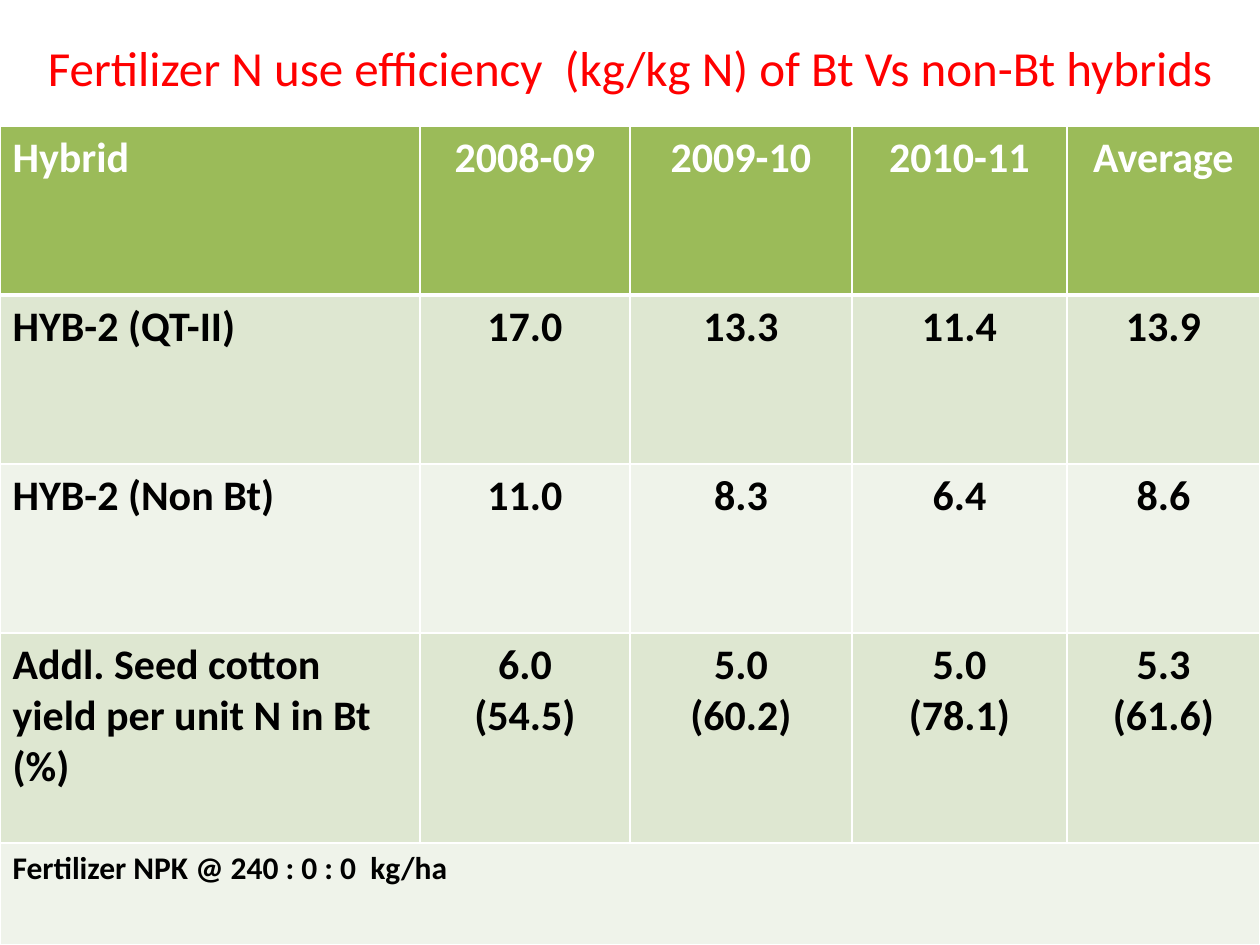
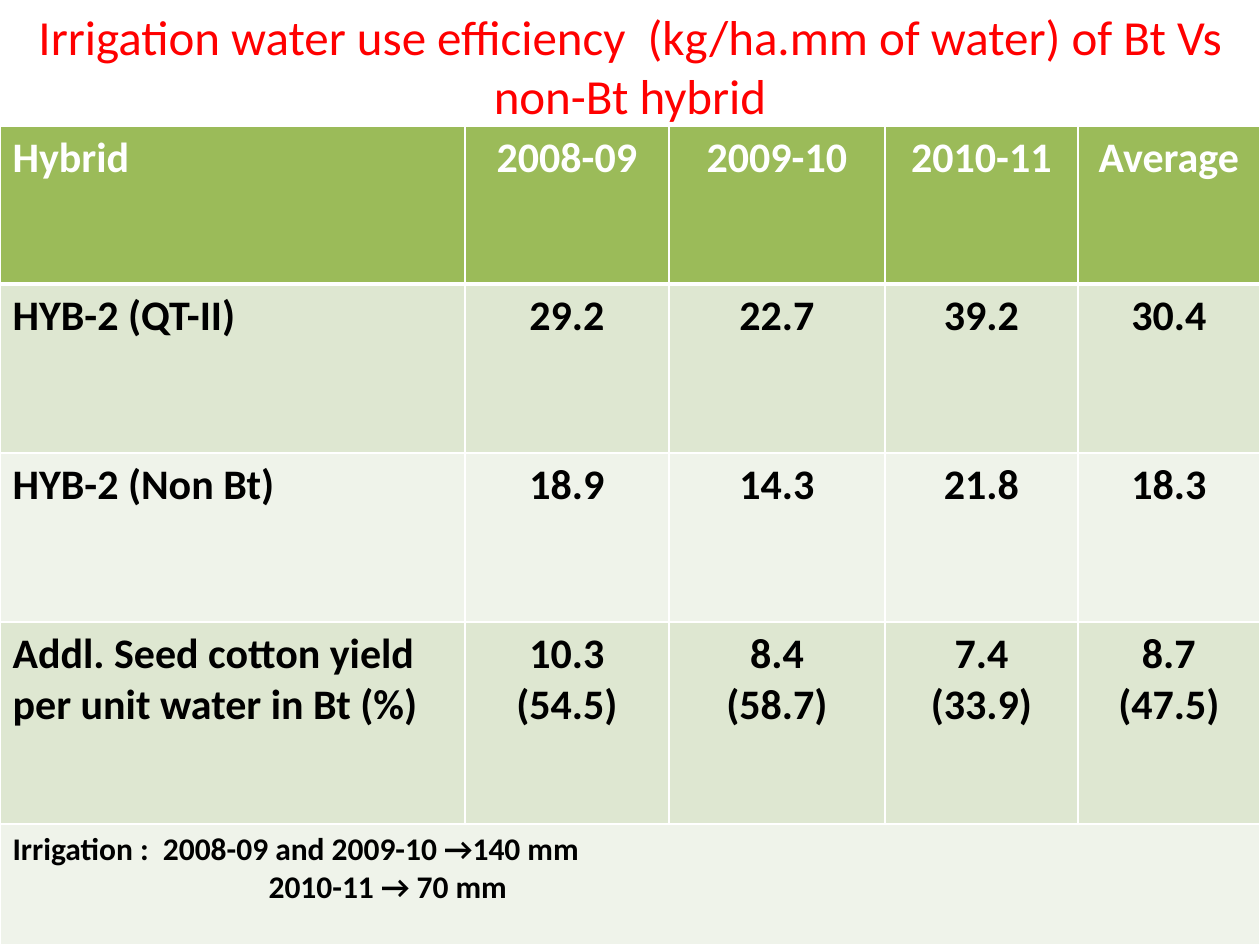
from lxml import etree
from pptx import Presentation
from pptx.dml.color import RGBColor
from pptx.enum.text import MSO_ANCHOR, MSO_AUTO_SIZE, PP_ALIGN
from pptx.oxml.ns import qn
from pptx.util import Emu, Pt

TOP = MSO_ANCHOR.TOP
NO_AUTOFIT = MSO_AUTO_SIZE.NONE
LEFT, CENTER = PP_ALIGN.LEFT, PP_ALIGN.CENTER
TITLE_ONLY = 5
PX_PER_INCH = 126
SLIDE_WIDTH, SLIDE_HEIGHT = 1260, 945
TABLE_TOP = 126
YEARS = ["Hybrid", "2008-09", "2009-10", "2010-11", "Average"]
BT_HYBRID, NON_BT_HYBRID = "HYB-2 (QT-II)", "HYB-2 (Non Bt)"


def px(length):
    return Emu(round(length * 914400 / PX_PER_INCH))


def color(hex_string):
    return RGBColor.from_string(hex_string)


class Deck:
    font_name = "Calibri"
    title_color = "FF0000"
    header_fill = "9BBB59"
    band_fills = ["EFF3EA", "DEE7D1"]
    white, black = "FFFFFF", "000000"
    title_size, body_size, note_size = 28, 24, 18

    def __init__(self):
        self.presentation = Presentation()
        self.presentation.slide_width = px(SLIDE_WIDTH)
        self.presentation.slide_height = px(SLIDE_HEIGHT)
        self.slide = None

    def add_slide(self):
        layout = self.presentation.slide_layouts[TITLE_ONLY]
        self.slide = self.presentation.slides.add_slide(layout)

    def format_paragraph(self, paragraph, size, text_color, bold, alignment):
        paragraph.alignment = alignment
        font = paragraph.font
        font.name, font.size, font.bold = self.font_name, Pt(size), bold
        font.color.rgb = color(text_color)

    def title(self, text, top, height):
        shape = self.slide.shapes.title
        shape.left, shape.top = px(0), px(top)
        shape.width, shape.height = px(SLIDE_WIDTH), px(height)
        frame = shape.text_frame
        frame.text = text
        frame.word_wrap = True
        frame.auto_size = NO_AUTOFIT
        frame.vertical_anchor = TOP
        self.format_paragraph(frame.paragraphs[0], self.title_size,
                              self.title_color, False, CENTER)

    def borders(self, cell, top, bottom):
        properties = cell._tc.get_or_add_tcPr()
        sides = {"a:lnL": 1, "a:lnR": 1, "a:lnT": top, "a:lnB": bottom}
        for index, (tag, width) in enumerate(sides.items()):
            line = etree.Element(qn(tag), w=str(Pt(width)))
            fill = etree.SubElement(line, qn("a:solidFill"))
            etree.SubElement(fill, qn("a:srgbClr"), val=self.white)
            properties.insert(index, line)

    def cell(self, cell, text, row, size, alignment):
        is_header = row == 0
        cell.fill.solid()
        cell.fill.fore_color.rgb = color(
            self.header_fill if is_header else self.band_fills[row % 2])
        self.borders(cell, 3 if row == 1 else 1, 3 if is_header else 1)
        cell.text = text
        for paragraph in cell.text_frame.paragraphs:
            self.format_paragraph(paragraph, size,
                                  self.white if is_header else self.black,
                                  True, alignment)

    def table(self, rows, note, column_widths, row_heights, note_indent=0):
        shape = self.slide.shapes.add_table(
            len(row_heights), len(column_widths), px(0), px(TABLE_TOP),
            px(sum(column_widths)), px(sum(row_heights)))
        table = shape.table
        for column, width in zip(table.columns, column_widths):
            column.width = px(width)
        for row, height in zip(table.rows, row_heights):
            row.height = px(height)
        for row_index, values in enumerate(rows):
            for column_index, text in enumerate(values):
                self.cell(table.cell(row_index, column_index), text, row_index,
                          self.body_size, CENTER if column_index else LEFT)
        last_row = len(rows)
        note_cell = table.cell(last_row, 0)
        note_cell.merge(table.cell(last_row, len(column_widths) - 1))
        self.cell(note_cell, note, last_row, self.note_size, LEFT)
        for paragraph in note_cell.text_frame.paragraphs[1:]:
            paragraph._p.get_or_add_pPr().set("marL", str(px(note_indent)))


def main():
    deck = Deck()

    deck.add_slide()
    deck.title("Fertilizer N use efficiency  (kg/kg N) of Bt Vs non-Bt hybrids", 31, 72)
    deck.table(
        [YEARS,
         [BT_HYBRID, "17.0", "13.3", "11.4", "13.9"],
         [NON_BT_HYBRID, "11.0", "8.3", "6.4", "8.6"],
         ["Addl. Seed cotton yield per unit N in Bt  (%)",
          "6.0\n(54.5)", "5.0\n(60.2)", "5.0\n(78.1)", "5.3\n(61.6)"]],
        "Fertilizer NPK @ 240 : 0 : 0  kg/ha",
        [420, 210, 222, 215, 193], [169, 169, 169, 210, 102])

    deck.add_slide()
    deck.title("Irrigation water use efficiency  (kg/ha.mm of water) of Bt Vs non-Bt hybrid", 0, 131)
    deck.table(
        [YEARS,
         [BT_HYBRID, "29.2", "22.7", "39.2", "30.4"],
         [NON_BT_HYBRID, "18.9", "14.3", "21.8", "18.3"],
         ["Addl. Seed cotton yield per unit water in Bt (%)",
          "10.3\n(54.5)", "8.4\n(58.7)", "7.4\n(33.9)", "8.7\n(47.5)"]],
        "Irrigation :  2008-09 and 2009-10 →140 mm\n2010-11 → 70 mm",
        [465, 204, 216, 193, 182], [158, 169, 169, 202, 121], note_indent=256)

    deck.presentation.save("out.pptx")


if __name__ == "__main__":
    main()
